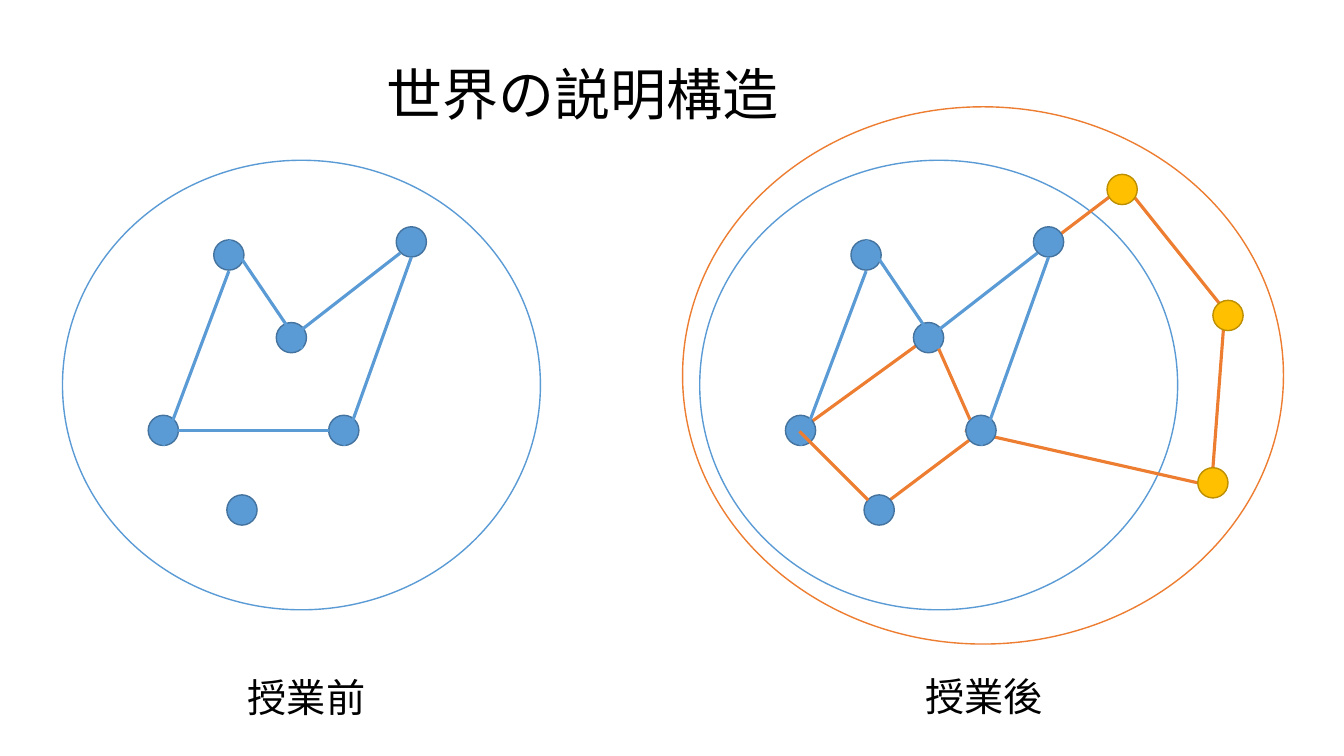
from lxml.etree import SubElement
from pptx import Presentation
from pptx.dml.color import RGBColor
from pptx.enum.shapes import MSO_CONNECTOR, MSO_SHAPE
from pptx.enum.text import MSO_AUTO_SIZE
from pptx.oxml.ns import qn
from pptx.util import Emu, Pt

PX = 9144
FONT = "Noto Sans CJK JP"
NODE_SIZE = 30
PANEL_SHIFT = 632
COLORS = {
    "white": "FFFFFF",
    "black": "000000",
    "blue": "5B9BD5",
    "blue_edge": "43739E",
    "orange": "ED7D31",
    "yellow": "FFC000",
    "yellow_edge": "BD8E00",
}

KNOWN_NODES = [(212, 238), (326, 412), (393, 225), (274, 320), (147, 412), (225, 491)]
KNOWN_LINKS = [
    (227, 269, 162, 442),
    (227, 238, 300, 346),
    (289, 335, 397, 251),
    (408, 255, 341, 442),
]
BASE_LINK = (177, 427, 326, 427)
NEW_NODES = [(1188, 464), (1098, 173), (1203, 298)]
LINKS_BEHIND = [
    (793, 427, 921, 334),
    (957, 427, 1188, 479),
    (1039, 242, 1114, 185),
    (872, 504, 961, 437),
]
LINKS_IN_FRONT = [
    (793, 428, 861, 496),
    (931, 346, 962, 416),
    (1203, 464, 1214, 319),
    (1219, 313, 1115, 183),
]


def px(*lengths):
    """Convert pixel lengths to EMU."""
    return [Emu(length * PX) for length in lengths]


def color(name):
    """Return the named palette colour."""
    return RGBColor.from_string(COLORS[name])


def add_ellipse(slide, box, fill, line):
    """Add an outlined ellipse."""
    shape = slide.shapes.add_shape(MSO_SHAPE.OVAL, *px(*box))
    shape.shadow.inherit = False
    shape.fill.solid()
    shape.fill.fore_color.rgb = color(fill)
    shape.line.color.rgb = color(line)
    shape.line.width = Pt(1)


def add_nodes(slide, nodes, fill, line, shift=0):
    """Add equal round nodes at the given corners."""
    for left, top in nodes:
        add_ellipse(slide, (left + shift, top, NODE_SIZE, NODE_SIZE), fill, line)


def add_links(slide, links, line, shift=0):
    """Add straight links between the given points."""
    for x1, y1, x2, y2 in links:
        ends = px(x1 + shift, y1, x2 + shift, y2)
        connector = slide.shapes.add_connector(MSO_CONNECTOR.STRAIGHT, *ends)
        connector.line.color.rgb = color(line)
        connector.line.width = Pt(2.25)
        SubElement(connector._element.spPr, qn("a:effectLst"))


def add_known_circle(slide, shift=0):
    """Add the circle around the known world."""
    add_ellipse(slide, (62 + shift, 159, 474, 446), "white", "blue")


def add_known_network(slide, shift=0):
    """Add the blue nodes and the links they share in both panels."""
    add_nodes(slide, KNOWN_NODES, "blue", "blue_edge", shift)
    add_links(slide, KNOWN_LINKS, "blue", shift)


def add_label(slide, box, text, size):
    """Add a one-line text box."""
    text_frame = slide.shapes.add_textbox(*px(*box)).text_frame
    text_frame.word_wrap = False
    text_frame.auto_size = MSO_AUTO_SIZE.SHAPE_TO_FIT_TEXT
    paragraph = text_frame.paragraphs[0]
    paragraph.text = text
    paragraph.font.size = Pt(size)
    paragraph.font.color.rgb = color("black")
    paragraph.font.name = FONT
    properties = paragraph._p.pPr.find(qn("a:defRPr"))
    SubElement(properties, qn("a:ea"), typeface=FONT)


def main():
    """Build the slide and save it."""
    presentation = Presentation()
    presentation.slide_width, presentation.slide_height = px(1333, 750)
    slide = presentation.slides.add_slide(presentation.slide_layouts[6])

    add_known_circle(slide)
    add_known_network(slide)
    add_links(slide, [BASE_LINK], "blue")

    add_ellipse(slide, (677, 106, 596, 533), "white", "orange")
    add_known_circle(slide, PANEL_SHIFT)
    add_links(slide, LINKS_BEHIND, "orange")
    add_known_network(slide, PANEL_SHIFT)
    add_links(slide, LINKS_IN_FRONT, "orange")
    add_nodes(slide, NEW_NODES, "yellow", "yellow_edge")

    add_label(slide, (374, 54, 413, 77), "世界の説明構造", 40)
    add_label(slide, (236, 663, 138, 57), "授業前", 28)
    add_label(slide, (908, 662, 138, 57), "授業後", 28)
    presentation.save("out.pptx")


if __name__ == "__main__":
    main()
